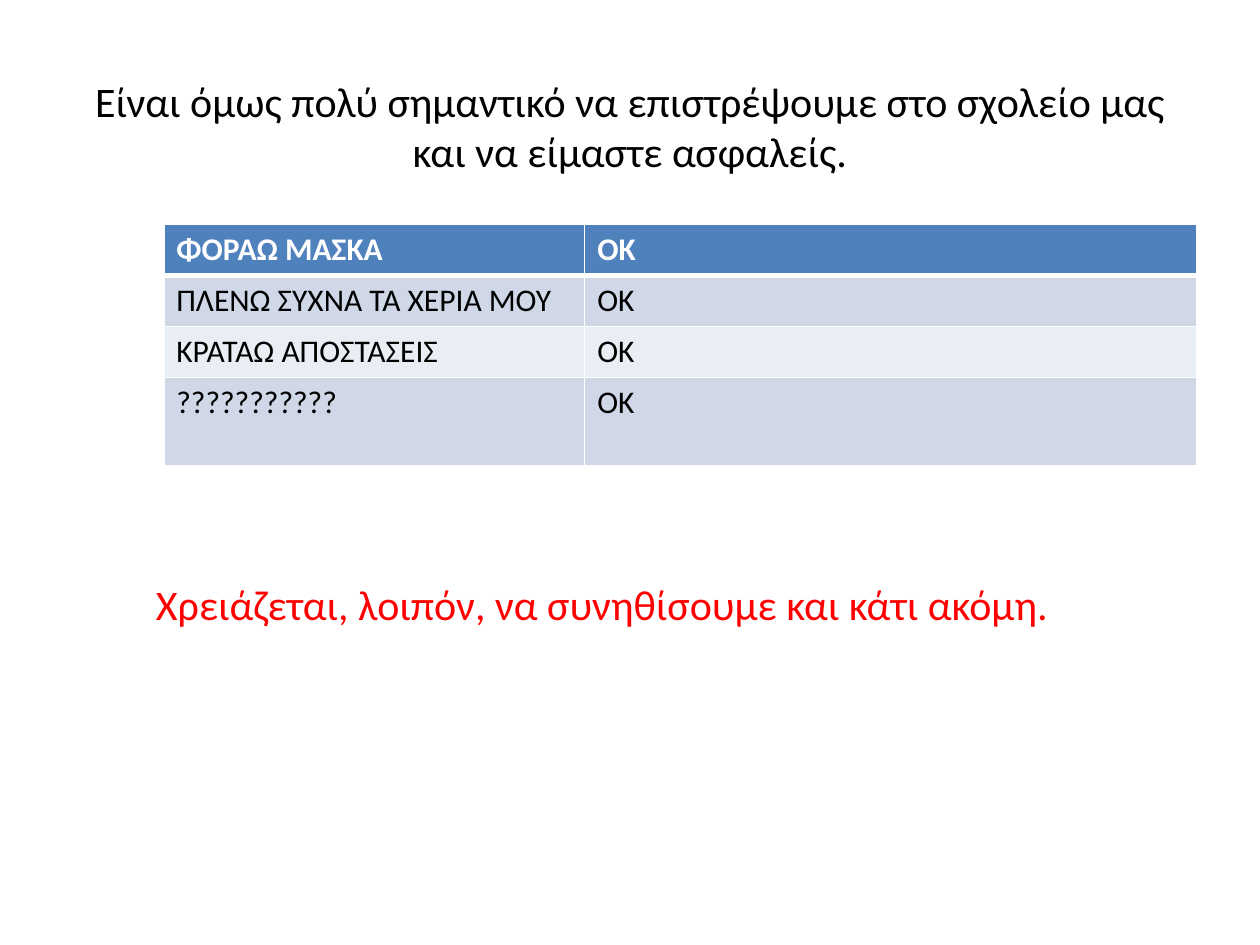
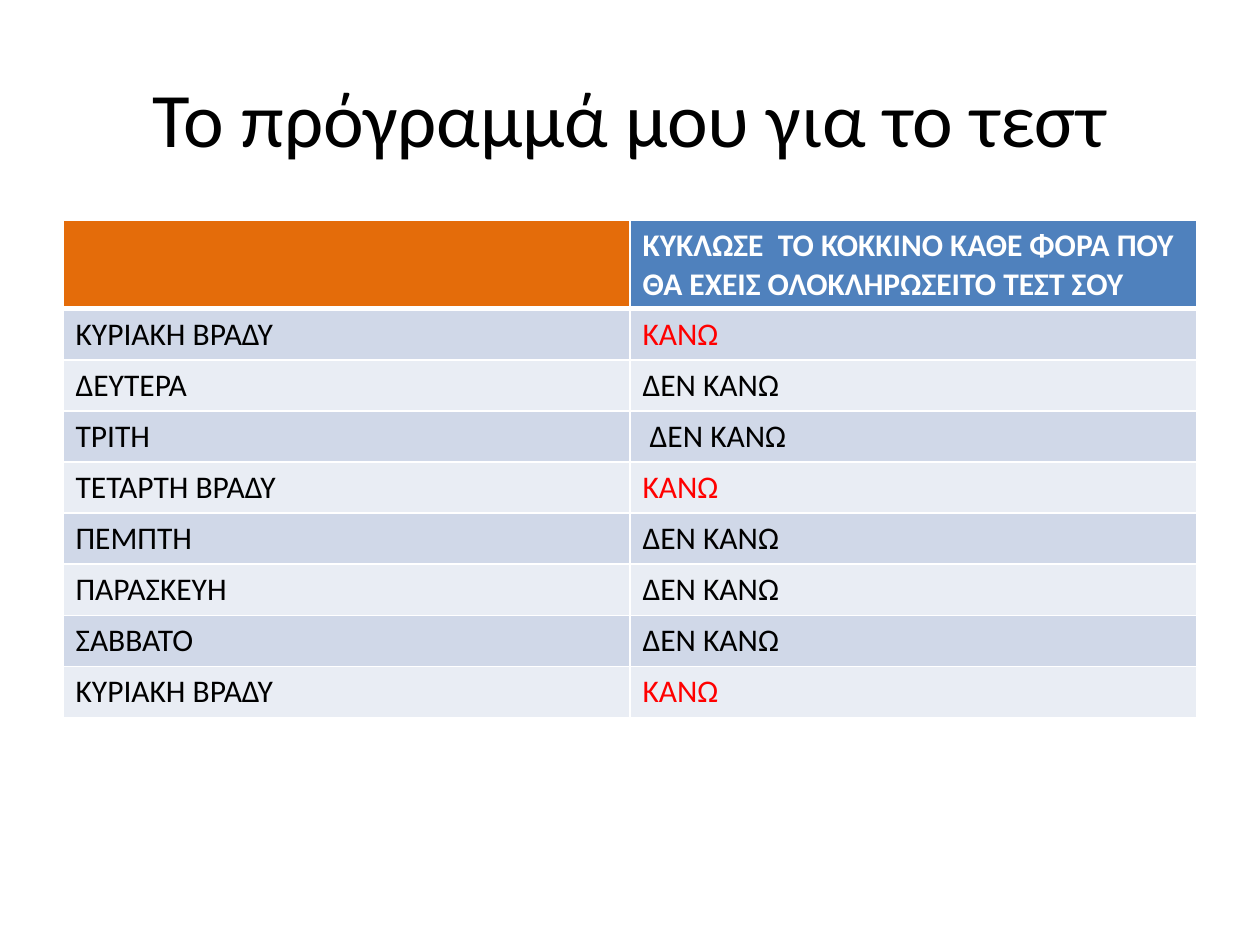
import dataclasses

import lxml.etree
import pptx
import pptx.dml.color
import pptx.enum.text
import pptx.oxml.ns
import pptx.util


@dataclasses.dataclass(frozen=True)
class Theme:
    """Colours, font and sizes in points shared by the slides."""

    font: str = "Calibri"
    ink: str = "000000"
    white: str = "FFFFFF"
    red: str = "FF0000"
    header: str = "4F81BD"
    orange: str = "E46C0A"
    bands: tuple = ("D0D8E8", "E9EDF4")
    title_size: float = 44
    message_size: float = 24
    table_size: float = 18
    row_height: float = 29.2
    tall_row_height: float = 50.4
    border: float = 1
    header_border: float = 3


THEME = Theme()
DO_TEST = "ΚΑΝΩ"
SKIP_TEST = "ΔΕΝ ΚΑΝΩ"

SAFETY_HABITS = [
    ("ΦΟΡΑΩ ΜΑΣΚΑ", "ΟΚ"),
    ("ΠΛΕΝΩ ΣΥΧΝΑ ΤΑ ΧΕΡΙΑ ΜΟΥ", "ΟΚ"),
    ("ΚΡΑΤΑΩ ΑΠΟΣΤΑΣΕΙΣ", "ΟΚ"),
    ("???????????", "ΟΚ"),
]

TEST_SCHEDULE = [
    ("", "ΚΥΚΛΩΣΕ  ΤΟ ΚΟΚΚΙΝΟ ΚΑΘΕ ΦΟΡΑ ΠΟΥ ΘΑ ΕΧΕΙΣ ΟΛΟΚΛΗΡΩΣΕΙΤΟ ΤΕΣΤ ΣΟΥ"),
    ("ΚΥΡΙΑΚΗ ΒΡΑΔΥ", DO_TEST),
    ("ΔΕΥΤΕΡΑ", SKIP_TEST),
    ("ΤΡΙΤΗ", " " + SKIP_TEST),
    ("ΤΕΤΑΡΤΗ ΒΡΑΔΥ", DO_TEST),
    ("ΠΕΜΠΤΗ", SKIP_TEST),
    ("ΠΑΡΑΣΚΕΥΗ", SKIP_TEST),
    ("ΣΑΒΒΑΤΟ", SKIP_TEST),
    ("ΚΥΡΙΑΚΗ ΒΡΑΔΥ", DO_TEST),
]


def add_blank_slide(presentation):
    """Add a slide with the blank layout."""
    return presentation.slides.add_slide(presentation.slide_layouts[6])


def set_text(text_frame, text, size, color, bold=False):
    """Write one paragraph and format its runs."""
    text_frame.text = text
    for run in text_frame.paragraphs[0].runs:
        run.font.name = THEME.font
        run.font.size = pptx.util.Pt(size)
        run.font.bold = bold
        run.font.color.rgb = pptx.dml.color.RGBColor.from_string(color)


def add_text(slide, text, box, size, color):
    """Add a wrapping text box at left, top, width and height."""
    shape = slide.shapes.add_textbox(*map(pptx.util.Pt, box))
    shape.text_frame.word_wrap = True
    set_text(shape.text_frame, text, size, color)
    return shape


def add_title(slide, text, height, size):
    """Add a centred title across the top of the slide."""
    shape = add_text(slide, text, (36, 21.6, 648, height), size, THEME.ink)
    shape.text_frame.vertical_anchor = pptx.enum.text.MSO_ANCHOR.MIDDLE
    shape.text_frame.paragraphs[0].alignment = pptx.enum.text.PP_ALIGN.CENTER


def set_borders(cell, top, bottom):
    """Draw white borders of the given top and bottom widths."""
    properties = cell._tc.get_or_add_tcPr()
    widths = {"L": THEME.border, "R": THEME.border, "T": top, "B": bottom}
    for side, width in widths.items():
        line = lxml.etree.SubElement(
            properties, pptx.oxml.ns.qn(f"a:ln{side}"), w=str(pptx.util.Pt(width))
        )
        fill = lxml.etree.SubElement(line, pptx.oxml.ns.qn("a:solidFill"))
        lxml.etree.SubElement(fill, pptx.oxml.ns.qn("a:srgbClr"), val=THEME.white)


def fill_cell(cell, color):
    """Fill a cell with a solid colour."""
    cell.fill.solid()
    cell.fill.fore_color.rgb = pptx.dml.color.RGBColor.from_string(color)


def style_cell(cell, row_index, text):
    """Write and colour a header cell or a banded body cell."""
    is_header = row_index == 0
    set_borders(
        cell,
        THEME.header_border if row_index == 1 else THEME.border,
        THEME.header_border if is_header else THEME.border,
    )
    if is_header:
        fill_cell(cell, THEME.header)
        color = THEME.white
    else:
        fill_cell(cell, THEME.bands[(row_index - 1) % 2])
        color = THEME.red if text == DO_TEST else THEME.ink
    set_text(cell.text_frame, text, THEME.table_size, color, is_header)


def add_banded_table(slide, rows, left, top, column_widths, tall_row):
    """Add a banded table in which one row is taller than the rest."""
    heights = [THEME.row_height] * len(rows)
    heights[tall_row] = THEME.tall_row_height
    box = (left, top, sum(column_widths), sum(heights))
    table = slide.shapes.add_table(
        len(rows), len(column_widths), *map(pptx.util.Pt, box)
    ).table
    for column, width in zip(table.columns, column_widths):
        column.width = pptx.util.Pt(width)
    for row_index, (texts, height) in enumerate(zip(rows, heights)):
        table.rows[row_index].height = pptx.util.Pt(height)
        for column_index, text in enumerate(texts):
            style_cell(table.cell(row_index, column_index), row_index, text)
    return table


def build_habits_slide(presentation):
    """Build the slide about staying safe at school."""
    slide = add_blank_slide(presentation)
    title = "Είναι όμως πολύ σημαντικό να επιστρέψουμε στο σχολείο μας και να είμαστε ασφαλείς."
    add_title(slide, title, 100.8, THEME.message_size)
    add_banded_table(slide, SAFETY_HABITS, 93.6, 128.2, (240.5, 349.9), tall_row=-1)
    message = "Χρειάζεται, λοιπόν, να συνηθίσουμε και κάτι ακόμη."
    add_text(slide, message, (82, 327, 578, 36), THEME.message_size, THEME.red)


def build_schedule_slide(presentation):
    """Build the slide with the weekly test schedule."""
    slide = add_blank_slide(presentation)
    add_title(slide, "Το πρόγραμμά μου για το τεστ", 90, THEME.title_size)
    table = add_banded_table(slide, TEST_SCHEDULE, 36, 126, (324, 324), tall_row=0)
    fill_cell(table.cell(0, 0), THEME.orange)


def main():
    """Build and save the presentation."""
    presentation = pptx.Presentation()
    presentation.slide_width = pptx.util.Pt(720)
    presentation.slide_height = pptx.util.Pt(540)
    build_habits_slide(presentation)
    build_schedule_slide(presentation)
    presentation.save("out.pptx")


if __name__ == "__main__":
    main()
